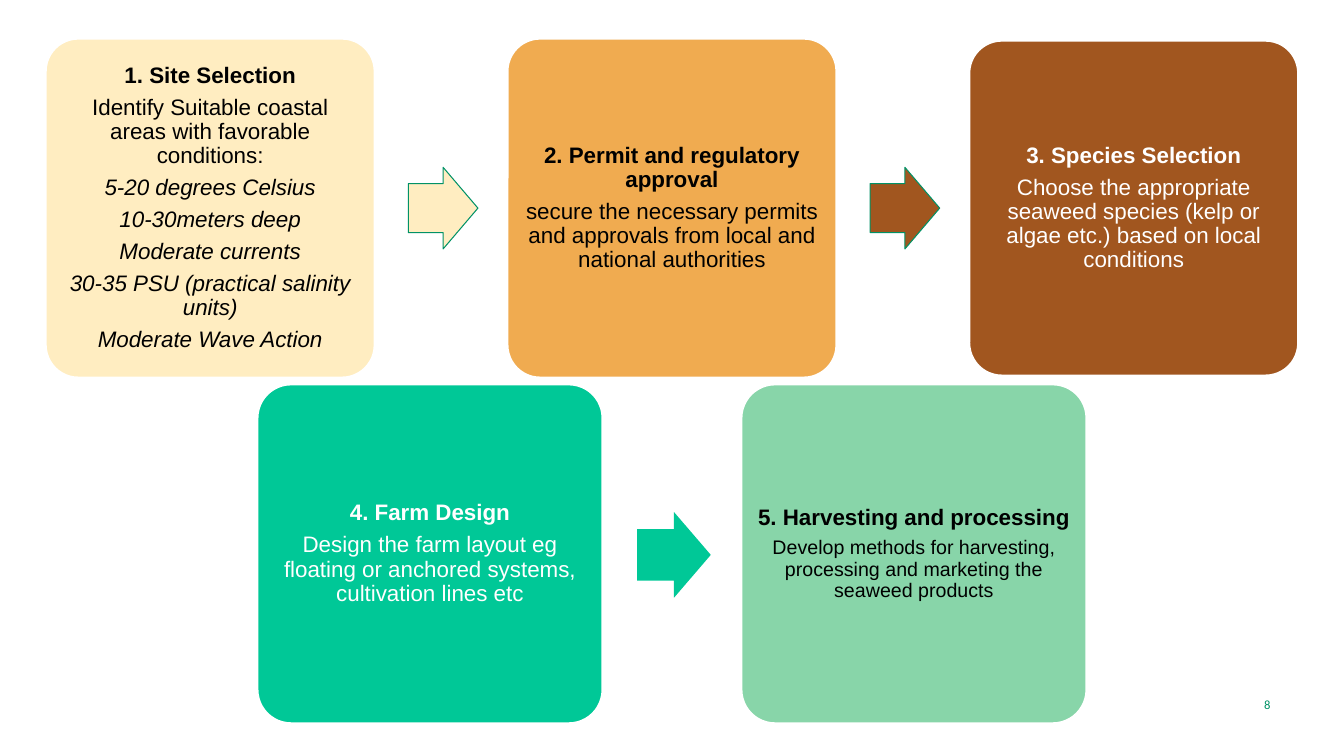
from pptx import Presentation
from pptx.dml.color import RGBColor
from pptx.enum.shapes import MSO_SHAPE as SHAPE
from pptx.enum.text import MSO_ANCHOR as ANCHOR, PP_ALIGN as ALIGN
from pptx.util import Inches, Pt

GREEN = "019266"
STEPS = [
    ((0.45, 0.38, 3.27, 3.37), "FFEDC1", "000000", 16, "1. Site Selection",
     "Identify Suitable coastal areas with favorable conditions:",
     ["5-20 degrees Celsius", "10-30meters deep", "Moderate currents",
      "30-35 PSU (practical salinity units)", "Moderate Wave Action"]),
    ((5.03, 0.38, 3.27, 3.37), "F0AB50", "000000", 16,
     "2. Permit and regulatory approval",
     "secure the necessary permits and approvals from local and national authorities", []),
    ((9.61, 0.4, 3.27, 3.33), "A1561F", "FFFFFF", 16, "3. Species Selection",
     "Choose the appropriate seaweed species (kelp or algae etc.) based on local conditions", []),
    ((2.55, 3.81, 3.43, 3.37), "00C897", "FFFFFF", 16, "4. Farm Design",
     "Design the farm layout eg floating or anchored systems, cultivation lines etc", []),
    ((7.35, 3.81, 3.43, 3.37), "88D5A9", "000000", 14, "5. Harvesting and processing",
     "Develop methods for harvesting, processing and marketing the seaweed products", []),
]
ARROWS = [
    ((4.05, 1.66, 0.69, 0.81), "FFEDC1", GREEN),
    ((8.63, 1.66, 0.69, 0.81), "A1561F", GREEN),
    ((6.32, 5.08, 0.73, 0.85), "00C897", None),
]


def rgb(value):
    """Turn a hex string into a colour."""
    return RGBColor.from_string(value)


def set_all(target, values):
    """Set each attribute of target from a dict."""
    for name, value in values.items():
        setattr(target, name, value)


def add_text(p, text, color, **font):
    """Write one run with its font format into a paragraph."""
    r = p.add_run()
    r.text = text
    set_all(r.font, font)
    r.font.color.rgb = rgb(color)


def add_frame(tf, side, edge):
    """Prepare a wrapped, vertically centred text frame."""
    set_all(tf, dict(word_wrap=True, vertical_anchor=ANCHOR.MIDDLE,
                     margin_left=Inches(side), margin_right=Inches(side),
                     margin_top=Inches(edge), margin_bottom=Inches(edge)))


def add_block(s, kind, box, adjustments, fill, line, width):
    """Add a filled preset shape with an optional outline."""
    sp = s.shapes.add_shape(kind, *map(Inches, box))
    sp.shadow.inherit = False
    for i, value in enumerate(adjustments):
        sp.adjustments[i] = value
    sp.fill.solid()
    sp.fill.fore_color.rgb = rgb(fill)
    if line:
        sp.line.color.rgb = rgb(line)
        sp.line.width = Pt(width)
    else:
        sp.line.fill.background()
    return sp


def add_step(s, box, fill, color, size, title, body, conditions):
    """Add a rounded card with a bold title, a body and italic conditions."""
    sp = add_block(s, SHAPE.ROUNDED_RECTANGLE, box, [0.1], fill, "FFFFFF", 2)
    tf = sp.text_frame
    add_frame(tf, 0.07, 0.07)
    lines = [(title, dict(size=Pt(16), bold=True)),
             (body, dict(size=Pt(size), bold=False))]
    lines += [(text, dict(size=Pt(16), italic=True)) for text in conditions]
    for i, (text, font) in enumerate(lines):
        p = tf.add_paragraph() if i else tf.paragraphs[0]
        set_all(p, dict(alignment=ALIGN.CENTER, line_spacing=0.9, space_after=Pt(5.6)))
        add_text(p, text, color, name="Arial", **font)


def add_page_number(s, number):
    """Add the slide number at the lower right."""
    box = s.shapes.add_textbox(*map(Inches, (11.55, 6.79, 1.15, 0.4)))
    add_frame(box.text_frame, 0.1, 0.05)
    p = box.text_frame.paragraphs[0]
    p.alignment = ALIGN.RIGHT
    add_text(p, number, GREEN, name="Calibri", size=Pt(9))


def main():
    """Build the slide and save it."""
    prs = Presentation()
    set_all(prs, dict(slide_width=Inches(13.33), slide_height=Inches(7.5)))
    s = prs.slides.add_slide(prs.slide_layouts[6])
    add_page_number(s, "8")
    for step in STEPS:
        add_step(s, *step)
    for box, fill, line in ARROWS:
        add_block(s, SHAPE.RIGHT_ARROW, box, [0.6, 0.5], fill, line, 0.75)
    prs.save("out.pptx")


if __name__ == "__main__":
    main()
